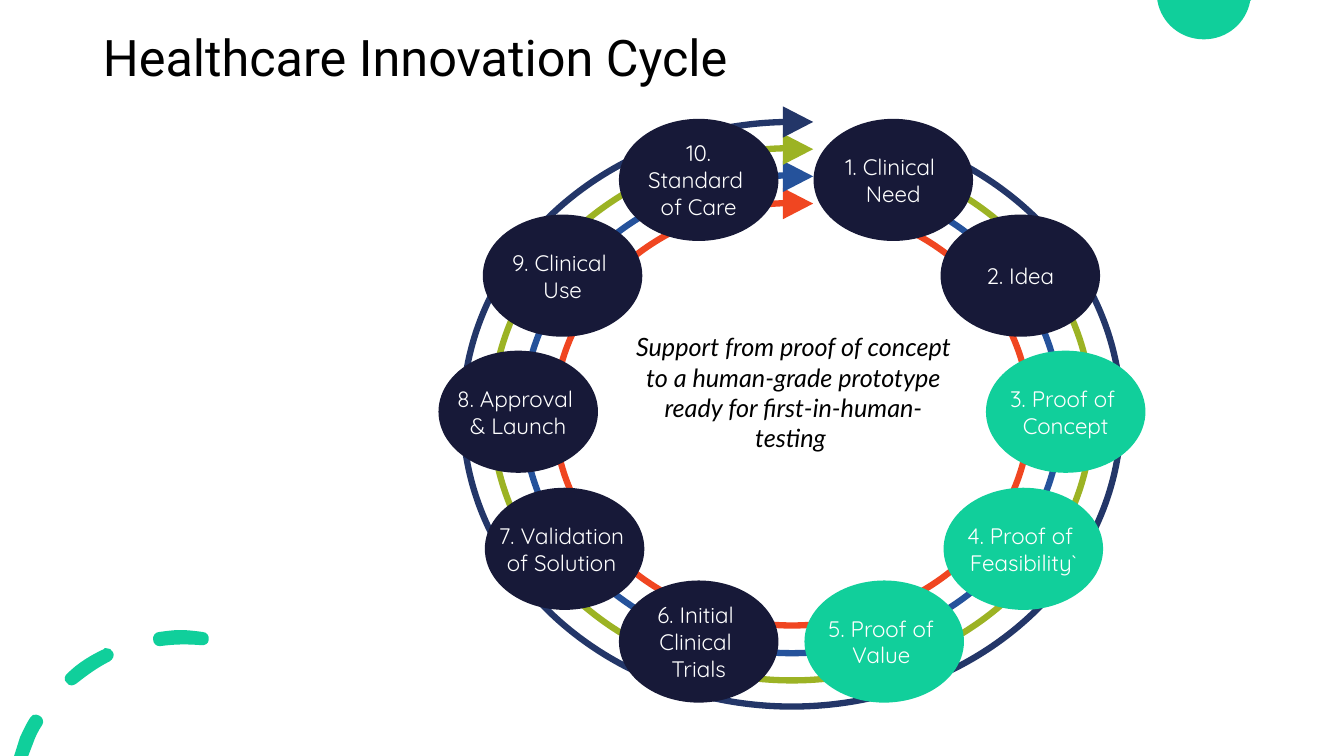
from pptx import Presentation
from pptx.dml.color import RGBColor
from pptx.enum.shapes import MSO_SHAPE as SHAPE
from pptx.enum.text import MSO_ANCHOR as ANCHOR, PP_ALIGN as ALIGN
from pptx.oxml.ns import qn
from pptx.util import Inches, Pt

WHITE = RGBColor(0xFF, 0xFF, 0xFF)
BLACK = RGBColor(0, 0, 0)
MINT = RGBColor(0x10, 0xCF, 0x9B)
GREEN = RGBColor(0x11, 0xCF, 0x9B)
INK = RGBColor(0x17, 0x19, 0x38)
NAVY = RGBColor(0x23, 0x36, 0x68)
OLIVE = RGBColor(0x9C, 0xB3, 0x24)
BLUE = RGBColor(0x25, 0x52, 0x9B)
ORANGE = RGBColor(0xF0, 0x46, 0x21)

TITLE = "Healthcare Innovation Cycle"
SUPPORT = ("Support from proof of concept to a human-grade prototype "
           "ready for first-in-human-testing ")

# Label lines, left, top, fill; drawn in this order
STAGES = [
    (["2. Idea"], 9.35, 2.15, INK),
    (["3. Proof of ", "Concept"], 9.8, 3.5, GREEN),
    (["4. Proof of ", "Feasibility`"], 9.38, 4.86, GREEN),
    (["5. Proof of ", "Value "], 8, 5.78, GREEN),
    (["6. Initial ", "Clinical ", "Trials"], 6.16, 5.78, INK),
    (["7. Validation ", "of Solution "], 4.83, 4.86, INK),
    (["8. Approval ", "& Launch"], 4.37, 3.5, INK),
    (["9. Clinical ", "Use"], 4.81, 2.15, INK),
    (["10.", "Standard ", "of Care"], 6.16, 1.2, INK),
    (["1. Clinical ", "Need"], 8.09, 1.2, INK),
]
STAGE_W, STAGE_H = 1.54, 1.17

# Width, height and colour, outermost first
RINGS = [(6.53, 5.8, NAVY), (5.95, 5.28, OLIVE), (5.33, 4.74, BLUE), (4.71, 4.19, ORANGE)]
RING_X, RING_Y = 7.855, 4.11
ARROW_LEFT, ARROW_TOP, ARROW_STEP = 7.76, 1.06, 0.27

# Outlines: a start point, then lines (2 numbers) and Bezier curves (6 numbers)
CORNER_DISC = [
    [(11.48, 0), (12.41, 0), (12.4, 0.01), (12.36, 0.23, 12.17, 0.39, 11.94, 0.39),
     (11.71, 0.39, 11.52, 0.23, 11.48, 0.01)],
]
CORNER_DASHES = [
    [(0.36, 7.09), (0.34, 7.08, 0.31, 7.1, 0.3, 7.12), (0.26, 7.18, 0.23, 7.25, 0.2, 7.31),
     (0.14, 7.5), (0.28, 7.5), (0.33, 7.37), (0.35, 7.31, 0.38, 7.25, 0.42, 7.19),
     (0.44, 7.16, 0.42, 7.11, 0.39, 7.1), (0.38, 7.09, 0.37, 7.09, 0.36, 7.09)],
    [(1.05, 6.43), (1.04, 6.43, 1.03, 6.43, 1.03, 6.44), (0.9, 6.5, 0.77, 6.58, 0.67, 6.68),
     (0.64, 6.7, 0.63, 6.75, 0.66, 6.77), (0.67, 6.79, 0.69, 6.8, 0.71, 6.8), (0.71, 6.8),
     (0.73, 6.8, 0.74, 6.79, 0.76, 6.78), (0.86, 6.7, 0.97, 6.62, 1.09, 6.56),
     (1.12, 6.54, 1.14, 6.5, 1.12, 6.47), (1.11, 6.44, 1.08, 6.43, 1.05, 6.43)],
    [(1.79, 6.25), (1.72, 6.25, 1.65, 6.26, 1.58, 6.27), (1.54, 6.27, 1.51, 6.31, 1.52, 6.35),
     (1.52, 6.38, 1.55, 6.41, 1.58, 6.41), (1.59, 6.41, 1.59, 6.41, 1.59, 6.41),
     (1.73, 6.39, 1.86, 6.39, 1.99, 6.4), (2.03, 6.41, 2.07, 6.38, 2.07, 6.35),
     (2.08, 6.31, 2.05, 6.27, 2.01, 6.27), (2.01, 6.27, 2.01, 6.27, 2.01, 6.27),
     (1.94, 6.26, 1.86, 6.25, 1.79, 6.25)],
]
UNITS = 100  # outline units per inch


def box(left, top, width, height):
    return [Inches(v) for v in (left, top, width, height)]


def paint(sp, fill=None, line=None, weight=0):
    sp.shadow.inherit = False
    if fill is None:
        sp.fill.background()
    else:
        sp.fill.solid()
        sp.fill.fore_color.rgb = fill
    if line is None:
        sp.line.fill.background()
    else:
        sp.line.color.rgb = line
        sp.line.width = Pt(weight)


def style(p, font, size, color, align=ALIGN.CENTER):
    p.alignment = align
    p.font.name = font
    p.font.size = Pt(size)
    p.font.color.rgb = color


def add_outlines(shapes, outlines):
    """Build every point as a line, then join each curve's three lines into a Bezier."""
    builder = shapes.build_freeform(*[v * UNITS for v in outlines[0][0]],
                                    scale=Inches(1) / UNITS)
    for i, (start, *segments) in enumerate(outlines):
        if i:
            builder.move_to(*[v * UNITS for v in start])
        flat = [v * UNITS for segment in segments for v in segment]
        builder.add_line_segments(list(zip(flat[::2], flat[1::2])), close=True)
    sp = builder.convert_to_shape()
    paint(sp, MINT)

    lines = iter(list(sp._element.iter(qn("a:lnTo"))))
    for outline in outlines:
        for segment in outline[1:]:
            first = next(lines)
            if len(segment) == 6:
                first.tag = qn("a:cubicBezTo")
                for extra in (next(lines), next(lines)):
                    first.append(extra[0])
                    extra.getparent().remove(extra)


def add_stage(shapes, lines, left, top, color):
    sp = shapes.add_shape(SHAPE.OVAL, *box(left, top, STAGE_W, STAGE_H))
    paint(sp, color, color, 3)
    tf = sp.text_frame
    tf.word_wrap = False
    tf.vertical_anchor = ANCHOR.MIDDLE
    tf.text = "\n".join(lines)
    for p in tf.paragraphs:
        style(p, "Quicksand", 16, WHITE)


def main():
    prs = Presentation()
    prs.slide_width, prs.slide_height = Inches(13.33), Inches(7.5)
    s = prs.slides.add_slide(prs.slide_layouts[5])
    shapes = s.shapes

    title = shapes.title
    title.left, title.top, title.width, title.height = box(0.92, 0.37, 11.5, 0.45)
    title.text_frame.text = TITLE
    title.text_frame.vertical_anchor = ANCHOR.MIDDLE
    p = title.text_frame.paragraphs[0]
    style(p, "Roboto", 36, BLACK, ALIGN.LEFT)
    p.line_spacing = 0.9

    for outlines in (CORNER_DISC, CORNER_DASHES):
        add_outlines(shapes, outlines)

    rings = shapes.add_group_shape().shapes
    for w, h, color in RINGS:
        sp = rings.add_shape(SHAPE.OVAL, *box(RING_X - w / 2, RING_Y - h / 2, w, h))
        paint(sp, line=color, weight=4.5)

    gap = shapes.add_shape(SHAPE.RECTANGLE, *box(7.79, 1.09, 0.77, 1.3))
    paint(gap, WHITE)

    arrows = shapes.add_group_shape().shapes
    for i, (_, _, color) in reversed(list(enumerate(RINGS))):
        sp = arrows.add_shape(SHAPE.ISOSCELES_TRIANGLE,
                              *box(ARROW_LEFT, ARROW_TOP + i * ARROW_STEP, 0.31, 0.3))
        sp.rotation = 90
        paint(sp, color)

    for stage in STAGES:
        add_stage(shapes, *stage)

    tf = shapes.add_textbox(*box(6.21, 3.24, 3.32, 1.31)).text_frame
    tf.word_wrap = True
    tf.text = SUPPORT
    style(tf.paragraphs[0], "Lato", 18, BLACK)
    tf.paragraphs[0].font.italic = True

    prs.save("out.pptx")


if __name__ == "__main__":
    main()
